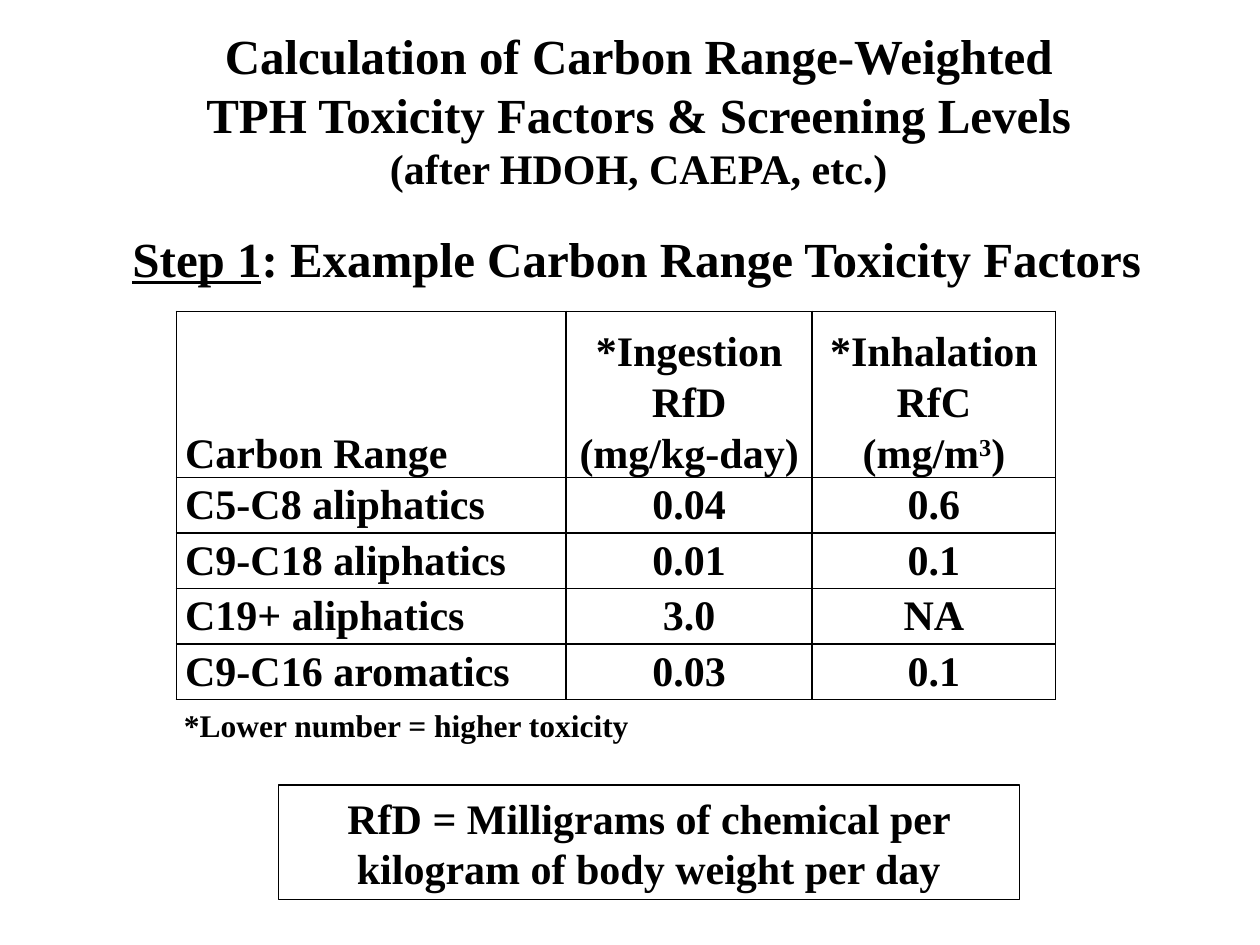
import pptx
import pptx.dml.color
import pptx.enum.shapes
import pptx.enum.text
import pptx.oxml
import pptx.oxml.ns
import pptx.util

Pt = pptx.util.Pt
ALIGN = pptx.enum.text.PP_ALIGN
ANCHOR = pptx.enum.text.MSO_ANCHOR
BLACK = pptx.dml.color.RGBColor(0, 0, 0)
FONT = "Times New Roman"

HEADERS = [
    ["Carbon Range"],
    ["*Ingestion", "RfD", "(mg/kg-day)"],
    ["*Inhalation", "RfC", [("(mg/m", {}), ("3", {"superscript": True}), (")", {})]],
]
TOXICITY_FACTORS = [
    ("C5-C8 aliphatics", "0.04", "0.6"),
    ("C9-C18 aliphatics", "0.01", "0.1"),
    ("C19+ aliphatics", "3.0", "NA"),
    ("C9-C16 aromatics", "0.03", "0.1"),
]
COLUMN_WIDTHS = [222.7, 140.6, 139.2]
HEADER_HEIGHT, ROW_HEIGHT = 95, 31.7


def write_text(frame, lines, size=24, align=ALIGN.CENTER, spacing=1.0):
    """Write one paragraph per line; a line is a string or a list of (text, format) runs."""
    for index, line in enumerate(lines):
        paragraph = frame.paragraphs[0] if index == 0 else frame.add_paragraph()
        paragraph.alignment = align
        paragraph.line_spacing = spacing
        for text, options in [(line, {})] if isinstance(line, str) else line:
            run = paragraph.add_run()
            run.text = text
            run.font.name = FONT
            run.font.size = Pt(options.get("size", size))
            run.font.bold = True
            run.font.underline = options.get("underline")
            run.font.color.rgb = BLACK
            if options.get("superscript"):
                run._r.get_or_add_rPr().set("baseline", "30000")


def place(shape, box):
    shape.left, shape.top, shape.width, shape.height = map(Pt, box)


def add_title(slide, box):
    title = slide.shapes.title
    place(title, box)
    frame = title.text_frame
    frame.word_wrap = False
    frame.auto_size = pptx.enum.text.MSO_AUTO_SIZE.NONE
    frame.vertical_anchor = ANCHOR.TOP
    write_text(frame, [
        "Calculation of Carbon Range-Weighted",
        "TPH Toxicity Factors & Screening Levels",
        [("(after HDOH, CAEPA, etc.)", {"size": 24})],
    ], size=28)


def add_label(slide, box, lines, **text_format):
    frame = slide.shapes.add_textbox(*map(Pt, box)).text_frame
    frame.word_wrap = True
    frame.vertical_anchor = ANCHOR.MIDDLE
    write_text(frame, lines, **text_format)


def add_definition(slide, box, lines):
    rectangle = slide.shapes.add_shape(
        pptx.enum.shapes.MSO_SHAPE.RECTANGLE, *map(Pt, box))
    rectangle.shadow.inherit = False
    rectangle.fill.background()
    rectangle.line.color.rgb = BLACK
    rectangle.line.width = Pt(0.75)
    rectangle.text_frame.word_wrap = True
    rectangle.text_frame.vertical_anchor = ANCHOR.MIDDLE
    write_text(rectangle.text_frame, lines)


def set_borders(cell, width=1):
    properties = cell._tc.get_or_add_tcPr()
    for index, side in enumerate(("lnL", "lnR", "lnT", "lnB")):
        properties.insert(index, pptx.oxml.parse_xml(
            f'<a:{side} {pptx.oxml.ns.nsdecls("a")} w="{Pt(width)}"><a:solidFill>'
            f'<a:srgbClr val="{BLACK}"/></a:solidFill></a:{side}>'))


def add_factor_table(slide, box):
    rows = [HEADERS] + [[[text] for text in row] for row in TOXICITY_FACTORS]
    table = slide.shapes.add_table(len(rows), len(HEADERS), *map(Pt, box)).table
    table.first_row = table.horz_banding = False
    for column, width in zip(table.columns, COLUMN_WIDTHS):
        column.width = Pt(width)
    for row_index, row in enumerate(rows):
        is_header = row_index == 0
        table.rows[row_index].height = Pt(HEADER_HEIGHT if is_header else ROW_HEIGHT)
        for column_index, lines in enumerate(row):
            cell = table.cell(row_index, column_index)
            cell.margin_left = cell.margin_right = Pt(5)
            cell.margin_top = cell.margin_bottom = 0
            cell.vertical_anchor = ANCHOR.BOTTOM if is_header else ANCHOR.TOP
            cell.fill.background()
            set_borders(cell)
            if column_index:
                align = ALIGN.CENTER
            else:
                align = ALIGN.LEFT if is_header else ALIGN.JUSTIFY
            write_text(cell.text_frame, lines, align=align, spacing=1.1)


def main():
    presentation = pptx.Presentation()
    presentation.slide_width, presentation.slide_height = Pt(720), Pt(540)
    slide = presentation.slides.add_slide(presentation.slide_layouts[5])
    add_title(slide, (108, 10.8, 514, 104.4))
    add_factor_table(slide, (100.8, 178, sum(COLUMN_WIDTHS),
                             HEADER_HEIGHT + ROW_HEIGHT * len(TOXICITY_FACTORS)))
    add_label(slide, (62.6, 126.7, 602.6, 41), [
        [("Step 1", {"underline": True}), (": Example Carbon Range Toxicity Factors", {})],
    ], size=28)
    add_label(slide, (98, 399.6, 423.4, 28.8), ["*Lower number = higher toxicity"],
              size=18, align=ALIGN.LEFT)
    add_definition(slide, (159, 448.6, 423.4, 65.5), [
        "RfD = Milligrams of chemical per kilogram of body weight per day"])
    presentation.save("out.pptx")


if __name__ == "__main__":
    main()
